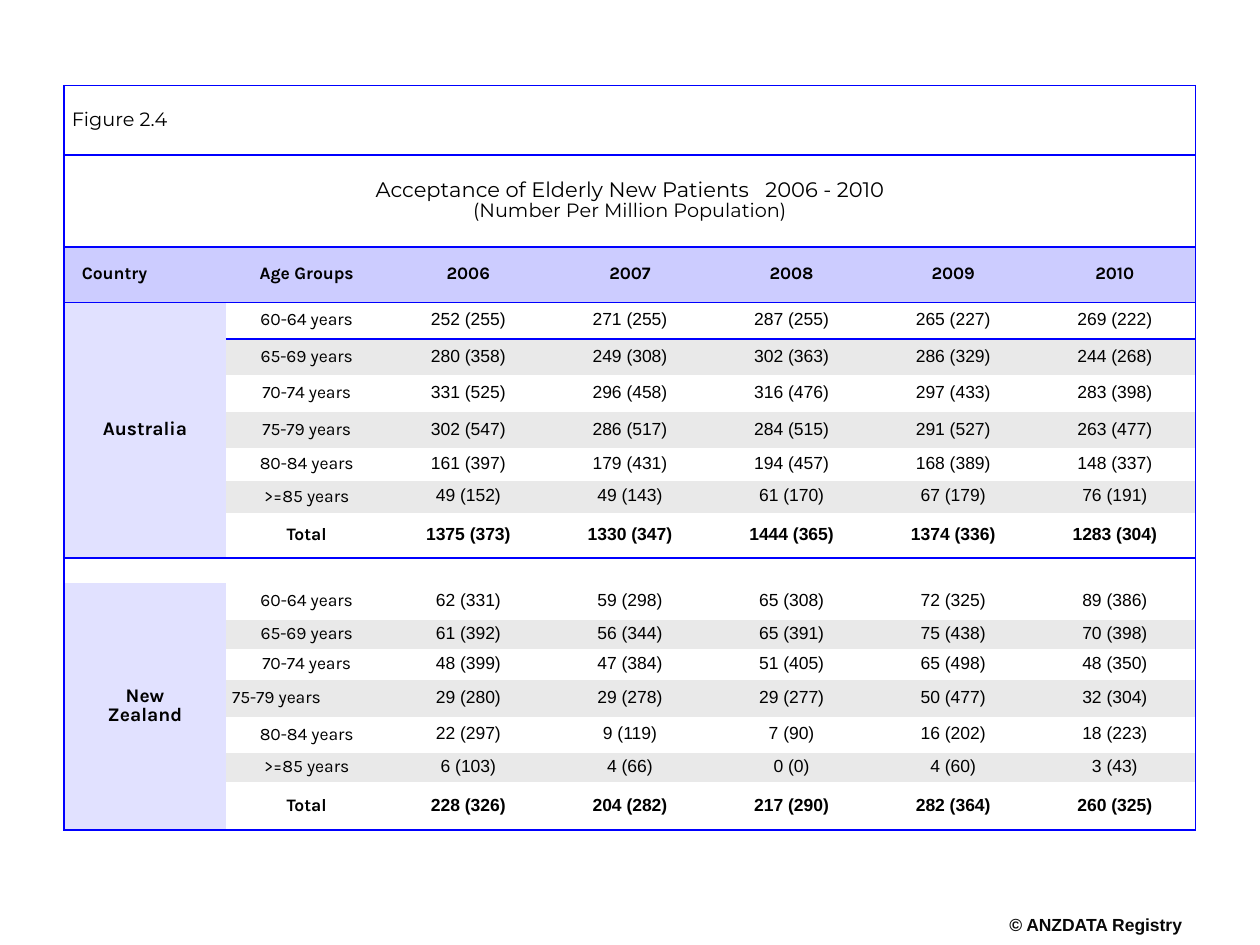
"""Build a slide with a table of elderly new patients by country, age group and year."""
from lxml import etree
from pptx import Presentation
from pptx.dml.color import RGBColor
from pptx.enum.text import MSO_ANCHOR, PP_ALIGN
from pptx.oxml.ns import qn
from pptx.util import Inches, Pt

CENTER, LEFT = PP_ALIGN.CENTER, PP_ALIGN.LEFT
MIDDLE = MSO_ANCHOR.MIDDLE
NO_STYLE = "{2D5ABB26-0587-4C30-8999-92F81FD0307C}"
BORDER, HEADER, COUNTRY, BAND = "0000FF", "CCCCFF", "E1E1FF", "E9E9E9"

YEARS = ["2006", "2007", "2008", "2009", "2010"]
AGE_GROUPS = ["60-64 years", "65-69 years", "70-74 years", "75-79 years",
              "80-84 years", ">=85 years", "Total"]
AUSTRALIA = [
    ["252 (255)", "271 (255)", "287 (255)", "265 (227)", "269 (222)"],
    ["280 (358)", "249 (308)", "302 (363)", "286 (329)", "244 (268)"],
    ["331 (525)", "296 (458)", "316 (476)", "297 (433)", "283 (398)"],
    ["302 (547)", "286 (517)", "284 (515)", "291 (527)", "263 (477)"],
    ["161 (397)", "179 (431)", "194 (457)", "168 (389)", "148 (337)"],
    ["49 (152)", "49 (143)", "61 (170)", "67 (179)", "76 (191)"],
    ["1375 (373)", "1330 (347)", "1444 (365)", "1374 (336)", "1283 (304)"],
]
NEW_ZEALAND = [
    ["62 (331)", "59 (298)", "65 (308)", "72 (325)", "89 (386)"],
    ["61 (392)", "56 (344)", "65 (391)", "75 (438)", "70 (398)"],
    ["48 (399)", "47 (384)", "51 (405)", "65 (498)", "48 (350)"],
    ["29 (280)", "29 (278)", "29 (277)", "50 (477)", "32 (304)"],
    ["22 (297)", "9 (119)", "7 (90)", "16 (202)", "18 (223)"],
    ["6 (103)", "4 (66)", "0 (0)", "4 (60)", "3 (43)"],
    ["228 (326)", "204 (282)", "217 (290)", "282 (364)", "260 (325)"],
]
ROW_HEIGHTS = [0.55, 0.73, 0.44, 0.29, 0.29, 0.29, 0.29, 0.26, 0.25, 0.36,
               0.2, 0.29, 0.23, 0.25, 0.29, 0.29, 0.23, 0.38]
COLUMN_WIDTH = 8.98 / 7
SPACER_ROW = ROW_HEIGHTS.index(0.2)
LAST_ROW, LAST_COLUMN = len(ROW_HEIGHTS) - 1, 6


def color(value):
    return RGBColor.from_string(value)


def write(frame, text, font_name, size, bold=False, align=CENTER, text_color="000000"):
    frame.text = text
    for paragraph in frame.paragraphs:
        paragraph.alignment = align
        paragraph.line_spacing = 0.85
        paragraph.font.name = font_name
        paragraph.font.size = Pt(size)
        paragraph.font.bold = bold
        paragraph.font.color.rgb = color(text_color)


presentation = Presentation()
presentation.slide_width, presentation.slide_height = Inches(10), Inches(7.5)
slide = presentation.slides.add_slide(presentation.slide_layouts[6])

credit = slide.shapes.add_textbox(Inches(7.99), Inches(7.28), Inches(1.41), Inches(0.17))
credit_frame = credit.text_frame
credit_frame.margin_left = credit_frame.margin_right = 0
credit_frame.margin_top = credit_frame.margin_bottom = 0
credit_frame.word_wrap = False
write(credit_frame, "© ANZDATA Registry", "Arial", 10, True, text_color="080808")

table = slide.shapes.add_table(
    len(ROW_HEIGHTS), LAST_COLUMN + 1,
    Inches(0.51), Inches(0.68), Inches(8.98), Inches(5.91)).table
table.first_row = table.horz_banding = False
table._tbl.tblPr.find(qn("a:tableStyleId")).text = NO_STYLE
for column in table.columns:
    column.width = Inches(COLUMN_WIDTH)
for row, height in zip(table.rows, ROW_HEIGHTS):
    row.height = Inches(height)

for row in (0, 1, SPACER_ROW):
    table.cell(row, 0).merge(table.cell(row, LAST_COLUMN))

write(table.cell(0, 0).text_frame, "Figure 2.4", "Montserrat", 11, align=LEFT)

title_frame = table.cell(1, 0).text_frame
write(title_frame, "Acceptance of Elderly New Patients\n(Number Per Million Population)",
      "Montserrat", 11)
title = title_frame.paragraphs[0]
title.font.size = Pt(12)
gap = title.add_run()
gap.text = " "
gap._r.get_or_add_rPr().set("spc", "600")
title.add_run().text = "2006 - 2010"

for column, heading in enumerate(["Country", "Age Groups"] + YEARS):
    cell = table.cell(2, column)
    write(cell.text_frame, heading, "Karla", 10, True, CENTER if column else LEFT)

fills = {(2, column): HEADER for column in range(LAST_COLUMN + 1)}
countries = [("Australia", 3, AUSTRALIA), ("New\nZealand", SPACER_ROW + 1, NEW_ZEALAND)]
for country, first_row, figures in countries:
    country_cell = table.cell(first_row, 0)
    country_cell.merge(table.cell(first_row + len(figures) - 1, 0))
    write(country_cell.text_frame, country, "Karla", 11, True)
    for offset, (age_group, values) in enumerate(zip(AGE_GROUPS, figures)):
        row = first_row + offset
        is_total = age_group == "Total"
        fills[row, 0] = COUNTRY
        write(table.cell(row, 1).text_frame, age_group, "Karla", 10, is_total)
        for column, value in enumerate(values, start=2):
            frame = table.cell(row, column).text_frame
            write(frame, value, "Arial", 10, is_total)
            frame.paragraphs[0].space_after = Pt(14)
        if offset % 2 and not is_total:
            fills.update({(row, column): BAND for column in range(1, LAST_COLUMN + 1)})

indents = {(0, 0): 0.06, (2, 0): 0.14, (SPACER_ROW + 4, 1): 0.05}
table.cell(SPACER_ROW + 4, 1).text_frame.paragraphs[0].alignment = LEFT

for row in range(len(ROW_HEIGHTS)):
    for column in range(LAST_COLUMN + 1):
        cell = table.cell(row, column)
        cell.vertical_anchor = MIDDLE
        cell.margin_left = Inches(indents.get((row, column), 0.02))
        cell.margin_right = Inches(0.02)
        cell.margin_top = cell.margin_bottom = Inches(0.01)
        if not cell.text_frame.text:
            paragraph = cell.text_frame.paragraphs[0]
            etree.SubElement(paragraph._p, qn("a:endParaRPr"), sz="800")
        spans_table = cell.is_merge_origin and cell.span_width > 1
        ends_table = cell.is_merge_origin and row + cell.span_height - 1 == LAST_ROW
        sides = {
            "L": column == 0,
            "R": column == LAST_COLUMN or spans_table,
            "T": row <= 3,
            "B": row <= 2 or row == LAST_ROW or ends_table,
        }
        properties = cell._tc.get_or_add_tcPr()
        for side, visible in sides.items():
            if visible:
                line = etree.SubElement(properties, qn(f"a:ln{side}"), w=str(Pt(1)))
                line_fill = etree.SubElement(line, qn("a:solidFill"))
                etree.SubElement(line_fill, qn("a:srgbClr"), val=BORDER)
        if (row, column) in fills:
            cell.fill.solid()
            cell.fill.fore_color.rgb = color(fills[row, column])
        else:
            cell.fill.background()

presentation.save("out.pptx")
